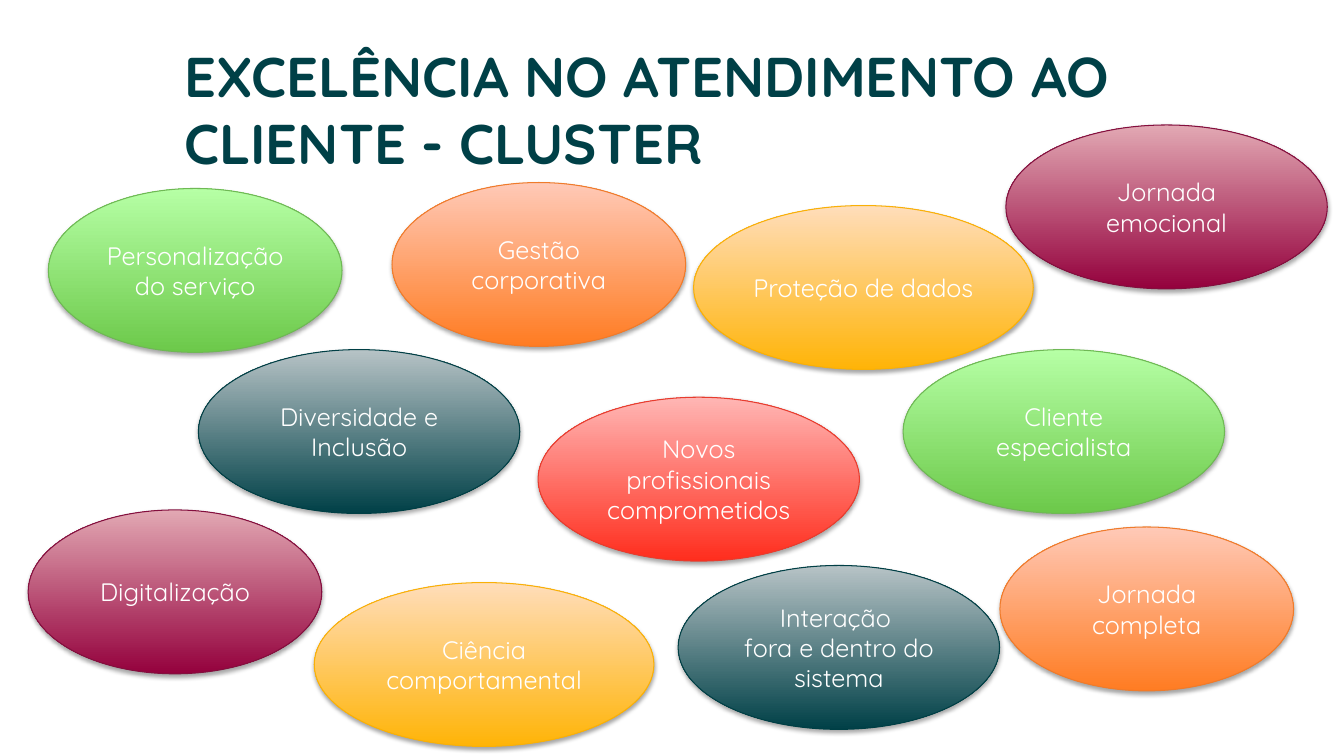
from lxml.etree import SubElement
from pptx import Presentation
from pptx.dml.color import RGBColor
from pptx.enum.shapes import MSO_SHAPE as Shape
from pptx.enum.text import MSO_ANCHOR as Anchor, PP_ALIGN as Align
from pptx.oxml.ns import qn
from pptx.util import Cm, Pt

COLORS = {
    "title": "004047",
    "text": "FFFFFF",
    "shadow": "000000",
}
GRADIENTS = {
    "green": ("6CC94A", "B6FFA5", "6FB855"),
    "wine": ("94013D", "E2A8B3", "830F3E"),
    "yellow": ("FFB407", "FFDDBA", "F9B007"),
    "red": ("FF2D1D", "FFB6B4", "E73C2E"),
    "teal": ("004047", "B7C3C6", "003F45"),
    "orange": ("FF7C22", "FFC9B7", "EF7B2B"),
}
NARROW, MEDIUM, WIDE = 7.4, 8.1, 8.56
BUBBLE_HEIGHT = 4.13

BUBBLES = [
    ("Personalização do serviço", "green", 1.22, 4.75, NARROW),
    ("Digitalização", "wine", 0.71, 12.85, NARROW),
    ("Ciência\ncomportamental", "yellow", 7.92, 14.68, WIDE),
    ("Novos profissionais comprometidos", "red", 13.56, 10.01, MEDIUM),
    ("Interação \nfora e dentro do sistema", "teal", 17.09, 14.25, MEDIUM),
    ("Gestão corporativa", "orange", 9.88, 4.6, NARROW),
    ("Cliente\nespecialista", "green", 22.76, 8.81, MEDIUM),
    ("Jornada emocional", "wine", 25.35, 3.15, MEDIUM),
    ("Diversidade e Inclusão", "teal", 5, 8.81, MEDIUM),
    ("Jornada completa", "orange", 25.2, 13.28, NARROW),
    ("Proteção de dados", "yellow", 17.48, 5.18, WIDE),
]


class ClusterSlide:
    font_name = "Quicksand"

    def __init__(self, presentation):
        self.slide = presentation.slides.add_slide(presentation.slide_layouts[6])

    def set_text(self, shape, text, size, color, align, anchor, bold=False):
        frame = shape.text_frame
        frame.text = text
        frame.word_wrap = True
        frame.vertical_anchor = anchor
        for paragraph in frame.paragraphs:
            paragraph.alignment = align
            for run in paragraph.runs:
                run.font.name = self.font_name
                run.font.size = Pt(size)
                run.font.bold = bold
                run.font.color.rgb = RGBColor.from_string(COLORS[color])

    def title(self, text, left, top, width, height):
        box = self.slide.shapes.add_textbox(Cm(left), Cm(top), Cm(width), Cm(height))
        self.set_text(box, text, 40, "title", Align.LEFT, Anchor.TOP, bold=True)

    def bubble(self, text, gradient, left, top, width):
        shape = self.slide.shapes.add_shape(
            Shape.OVAL, Cm(left), Cm(top), Cm(width), Cm(BUBBLE_HEIGHT))
        bottom, upper, outline = GRADIENTS[gradient]
        shape.fill.gradient()
        shape.fill.gradient_angle = 90
        for stop, position, color in zip(shape.fill.gradient_stops, (0, 1), (bottom, upper)):
            stop.position = position
            stop.color.rgb = RGBColor.from_string(color)
        shape.line.color.rgb = RGBColor.from_string(outline)
        shape.line.width = Pt(0.75)
        self.drop_shadow(shape)
        self.set_text(shape, text, 18, "text", Align.CENTER, Anchor.MIDDLE)

    def drop_shadow(self, shape):
        shape.shadow.inherit = False
        effects = shape.element.spPr.find(qn("a:effectLst"))
        shadow = SubElement(effects, qn("a:outerShdw"), blurRad=str(Pt(3.1)),
                            dist=str(Pt(1.8)), dir="5400000", rotWithShape="0")
        color = SubElement(shadow, qn("a:srgbClr"), val=COLORS["shadow"])
        SubElement(color, qn("a:alpha"), val="35000")


def main():
    presentation = Presentation()
    presentation.slide_width = Cm(33.87)
    presentation.slide_height = Cm(19.05)
    cluster = ClusterSlide(presentation)
    cluster.title("EXCELÊNCIA NO ATENDIMENTO AO CLIENTE - CLUSTER", 4.39, 0.91, 29.48, 1.83)
    for bubble in BUBBLES:
        cluster.bubble(*bubble)
    presentation.save("out.pptx")


if __name__ == "__main__":
    main()
